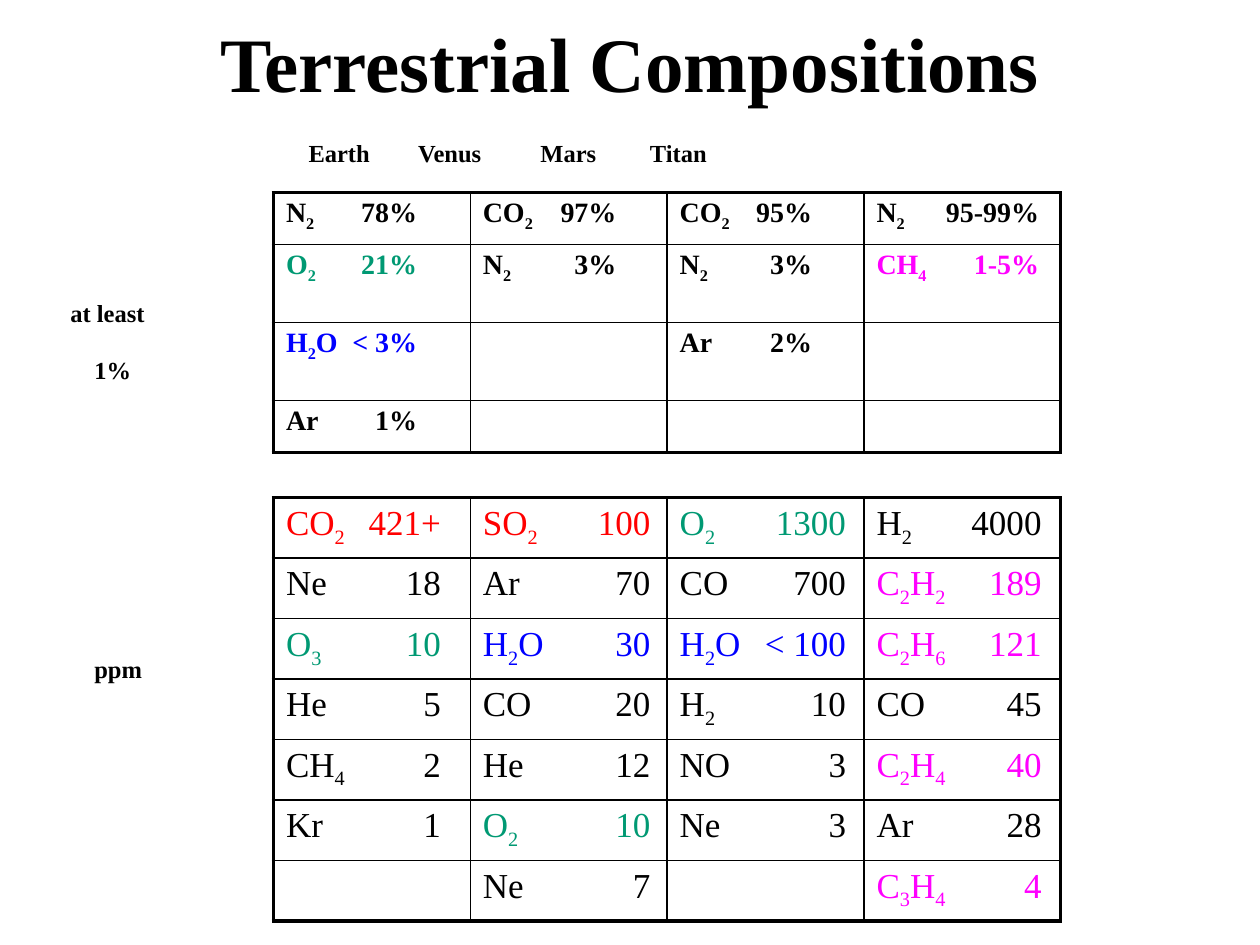
from pptx import Presentation
from pptx.util import Inches, Pt
from pptx.dml.color import RGBColor
from pptx.enum.text import PP_ALIGN, MSO_ANCHOR
from pptx.oxml.ns import qn
from lxml.etree import SubElement, Element

FONT = "Times New Roman"
HUES = {"black": "000000", "red": "FF0000", "green": "009973",
        "blue": "0000FF", "pink": "FF00FF"}


def style(run, size, bold, hue="black"):
    font = run.font
    font.name, font.size, font.bold = FONT, Pt(size), bold
    font.color.rgb = RGBColor.from_string(HUES[hue])


def set_tabs(para, stops, side):
    tabs = SubElement(para._p.get_or_add_pPr(), qn("a:tabLst"))
    for stop in stops:
        SubElement(tabs, qn("a:tab"), pos=str(Inches(stop)), algn=side)


deck = Presentation()
deck.slide_width, deck.slide_height = Inches(10), Inches(7.5)
slide = deck.slides.add_slide(deck.slide_layouts[6])

# Title
box = slide.shapes.add_textbox(Inches(0.75), 0, Inches(8.5), Inches(0.98))
frame = box.text_frame
frame.word_wrap = True
frame.vertical_anchor = MSO_ANCHOR.MIDDLE
frame.text = "Terrestrial Compositions"
frame.paragraphs[0].alignment = PP_ALIGN.CENTER
style(frame.paragraphs[0].runs[0], 44, True)

# Tables: one gas and its amount per cell, columns Earth, Venus, Mars, Titan
LEFT, WIDE, COLS = 2.17, 6.25, 4
major = [
    ["N2 78%", "CO2 97%", "CO2 95%", "N2 95-99%"],
    ["O2 21%", "N2 3%", "N2 3%", "CH4 1-5%"],
    ["H2O < 3%", "", "Ar 2%", ""],
    ["Ar 1%", "", "", ""],
]
trace = [
    ["CO2 421+", "SO2 100", "O2 1300", "H2 4000"],
    ["Ne 18", "Ar 70", "CO 700", "C2H2 189"],
    ["O3 10", "H2O 30", "H2O < 100", "C2H6 121"],
    ["He 5", "CO 20", "H2 10", "CO 45"],
    ["CH4 2", "He 12", "NO 3", "C2H4 40"],
    ["Kr 1", "O2 10", "Ne 3", "Ar 28"],
    ["", "Ne 7", "", "C3H4 4"],
]
tint = {"O2": "green", "O3": "green", "H2O": "blue", "SO2": "red",
        "C2H2": "pink", "C2H6": "pink", "C2H4": "pink", "C3H4": "pink"}
# rows, top, row heights, text size, bold, top inset, tab stops, hues
grids = [
    (major, 1.53, [0.41, 0.62, 0.62, 0.41], 16, True, 0.04,
     [1.04, 1.06, 1.05, 1.29], {**tint, "CH4": "pink"}),
    (trace, 3.95, [0.48] * len(trace), 20, False, 0.05,
     [1.23, 1.33, 1.32, 1.31], {**tint, "CO2": "red"}),
]
for rows, top, highs, size, bold, inset, stops, hues in grids:
    table = slide.shapes.add_table(
        len(rows), COLS, Inches(LEFT), Inches(top),
        Inches(WIDE), Inches(sum(highs))).table
    table.first_row = table.horz_banding = False
    for col in table.columns:
        col.width = Inches(WIDE / COLS)
    for r, (row, high) in enumerate(zip(rows, highs)):
        table.rows[r].height = Inches(high)
        for c, entry in enumerate(row):
            cell = table.cell(r, c)
            cell.margin_left = cell.margin_right = Inches(0.1)
            cell.margin_top = cell.margin_bottom = Inches(inset)
            cell.fill.background()

            # Thick outer frame, thin inner lines
            outer = {"L": c == 0, "R": c == COLS - 1,
                     "T": r == 0, "B": r == len(rows) - 1}
            for n, (side, edge) in enumerate(outer.items()):
                line = Element(qn("a:ln" + side),
                               w=str(Pt(2.25 if edge else 1)))
                fill = SubElement(line, qn("a:solidFill"))
                SubElement(fill, qn("a:srgbClr"), val=HUES["black"])
                cell._tc.get_or_add_tcPr().insert(n, line)

            # Formula with lowered digits, then the amount at a right tab
            para = cell.text_frame.paragraphs[0]
            if not entry:
                para.font.size = Pt(size)
                continue
            set_tabs(para, [stops[c]], "r")
            gas, amount = entry.split(" ", 1)
            for part in [*gas, "\t" + amount]:
                run = para.add_run()
                run.text = part
                style(run, size, bold, hues.get(gas, "black"))
                if part.isdigit():
                    run._r.get_or_add_rPr().set("baseline", "-25000")

# Labels: left, top, width, height, lines, tab stops
labels = [
    (0.46, 2.1, 1.21, 1, ["at least", "1%"], []),
    (0.65, 4.92, 0.85, 0.5, ["ppm"], []),
    (2.35, 0.83, 5.71, 0.5, ["Earth\tVenus\tMars\tTitan"],
     [0.87, 1.84, 2.71]),
]
for left, top, wide, high, lines, stops in labels:
    box = slide.shapes.add_textbox(
        Inches(left), Inches(top), Inches(wide), Inches(high))
    frame = box.text_frame
    frame.word_wrap = True
    frame.text = "\n".join(lines)
    for n, para in enumerate(frame.paragraphs):
        para.line_spacing = Pt(32.5)
        para._p.get_or_add_pPr().set("marL", str(Inches(0.19 * n)))
        if stops:
            set_tabs(para, stops, "l")
        for run in para.runs:
            style(run, 14, True)

deck.save("out.pptx")
